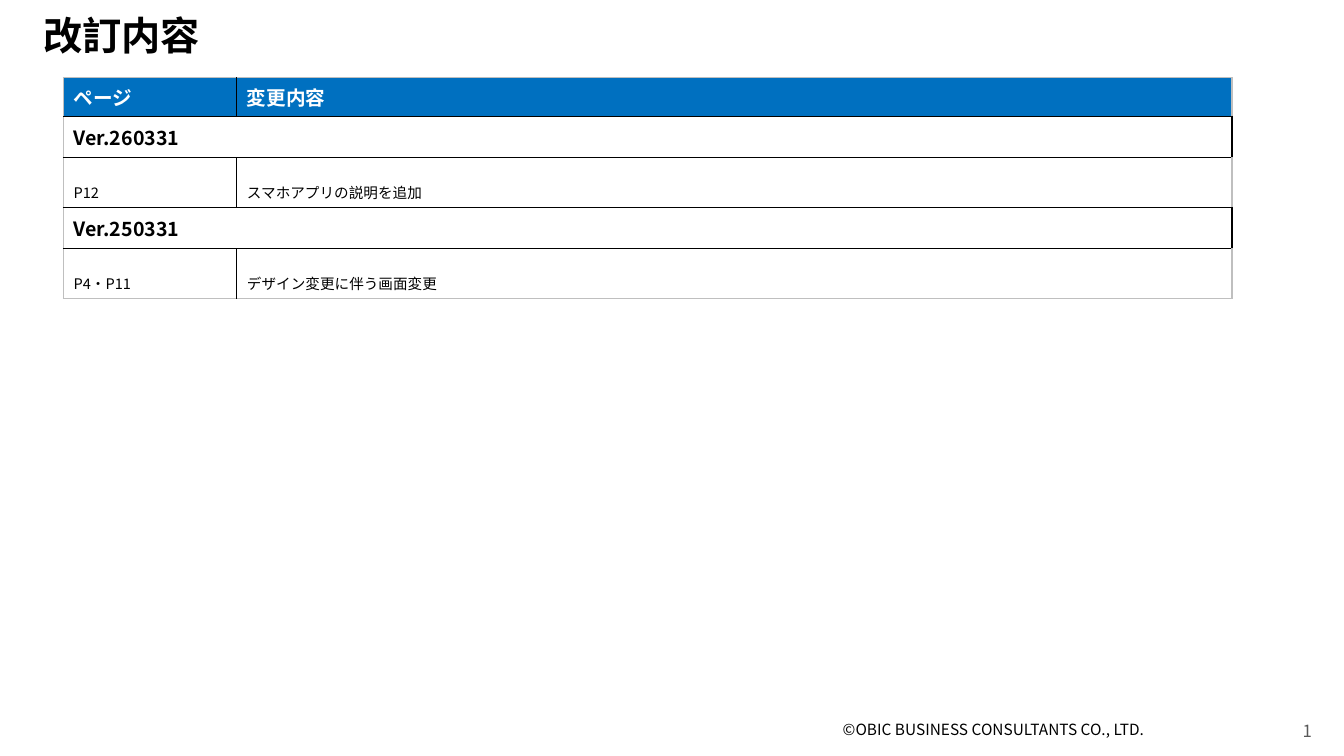
from dataclasses import dataclass

from lxml import etree
from pptx import Presentation
from pptx.dml.color import RGBColor
from pptx.enum.text import MSO_ANCHOR, PP_ALIGN
from pptx.oxml.ns import qn
from pptx.table import _Cell
from pptx.text.text import TextFrame
from pptx.util import Inches, Pt

LEFT, RIGHT = PP_ALIGN.LEFT, PP_ALIGN.RIGHT
TOP, MIDDLE = MSO_ANCHOR.TOP, MSO_ANCHOR.MIDDLE

FONT = "Noto Sans CJK JP"
BLACK = RGBColor(0x00, 0x00, 0x00)
WHITE = RGBColor(0xFF, 0xFF, 0xFF)
BLUE = RGBColor(0x00, 0x70, 0xC0)
GRAY = RGBColor(0x59, 0x59, 0x59)
EDGE_GRAY = RGBColor(0xBF, 0xBF, 0xBF)

TITLE_ONLY = 5
COLUMN_WIDTHS = (1.72, 9.87)
HEADER_HEIGHT, ROW_HEIGHT = 0.34, 0.41


@dataclass(frozen=True)
class Revision:
    version: str
    pages: str
    change: str


@dataclass(frozen=True)
class FooterText:
    text: str
    left: float
    width: float
    size: float
    color: RGBColor
    align: PP_ALIGN


REVISIONS = (
    Revision("Ver.260331", "P12", "スマホアプリの説明を追加"),
    Revision("Ver.250331", "P4・P11", "デザイン変更に伴う画面変更"),
)
FOOTER = (
    FooterText("©OBIC BUSINESS CONSULTANTS CO., LTD.", 8.26, 4.5, 11, BLACK, LEFT),
    FooterText("1", 10.11, 3, 12, GRAY, RIGHT),
)


def write(frame: TextFrame, text: str, *, size: float, color: RGBColor = BLACK,
          bold: bool = False, align: PP_ALIGN = LEFT, spacing: float = 1.0,
          baseline: int = 0) -> None:
    """Fill a text frame with one formatted paragraph; baseline is in percent."""
    frame.word_wrap = True
    paragraph = frame.paragraphs[0]
    paragraph.alignment = align
    paragraph.line_spacing = spacing
    run = paragraph.add_run()
    run.text = text
    run.font.size = Pt(size)
    run.font.bold = bold
    run.font.color.rgb = color
    run.font.name = FONT
    properties = run._r.get_or_add_rPr()
    etree.SubElement(properties, qn("a:ea"), typeface=FONT)
    if baseline:
        properties.set("baseline", str(baseline * 1000))


def set_border(cell: _Cell, side: str, color: RGBColor) -> None:
    line = etree.SubElement(cell._tc.get_or_add_tcPr(), qn(f"a:ln{side}"),
                            w=str(Pt(1)))
    fill = etree.SubElement(line, qn("a:solidFill"))
    etree.SubElement(fill, qn("a:srgbClr"), val=str(color))


def add_footer(slide, item: FooterText) -> None:
    box = slide.shapes.add_textbox(Inches(item.left), Inches(7.1),
                                   Inches(item.width), Inches(0.4))
    write(box.text_frame, item.text, size=item.size, color=item.color,
          align=item.align)


def add_revision_table(slide) -> None:
    row_count = 1 + 2 * len(REVISIONS)
    height = HEADER_HEIGHT + ROW_HEIGHT * (row_count - 1)
    table = slide.shapes.add_table(
        row_count, len(COLUMN_WIDTHS), Inches(0.63), Inches(0.77),
        Inches(sum(COLUMN_WIDTHS)), Inches(height)).table
    table.first_row = table.horz_banding = False
    for column, width in zip(table.columns, COLUMN_WIDTHS):
        column.width = Inches(width)

    # Borders: gray outside, black inside
    last_row, last_column = row_count - 1, len(COLUMN_WIDTHS) - 1
    for r, row in enumerate(table.rows):
        row.height = Inches(ROW_HEIGHT if r else HEADER_HEIGHT)
        for c, cell in enumerate(row.cells):
            outside = {"L": c == 0, "R": c == last_column,
                       "T": r == 0, "B": r == last_row}
            for side, is_edge in outside.items():
                set_border(cell, side, EDGE_GRAY if is_edge else BLACK)
            cell.vertical_anchor = MIDDLE
            if r == 0:
                cell.fill.solid()
                cell.fill.fore_color.rgb = BLUE
            else:
                cell.fill.background()

    # Header, then a version row and a change row for each revision
    for c, heading in enumerate(("ページ", "変更内容")):
        write(table.cell(0, c).text_frame, heading, size=14, color=WHITE, bold=True)
    for i, revision in enumerate(REVISIONS):
        r = 1 + 2 * i
        version = table.cell(r, 0)
        version.merge(table.cell(r, last_column))
        write(version.text_frame, revision.version, size=14, bold=True)
        for c, text in enumerate((revision.pages, revision.change)):
            write(table.cell(r + 1, c).text_frame, text, size=18, baseline=-25)


def main() -> None:
    deck = Presentation()
    deck.slide_width, deck.slide_height = Inches(13.33), Inches(7.5)
    slide = deck.slides.add_slide(deck.slide_layouts[TITLE_ONLY])

    # Title
    title = slide.shapes.title
    title.left, title.top = Inches(0.33), Inches(0.11)
    title.width, title.height = Inches(12.55), Inches(0.65)
    title.text_frame.vertical_anchor = TOP
    write(title.text_frame, "改訂内容", size=28, bold=True, spacing=0.9)

    # Revision history and footer
    add_revision_table(slide)
    for item in FOOTER:
        add_footer(slide, item)

    deck.save("out.pptx")


if __name__ == "__main__":
    main()
